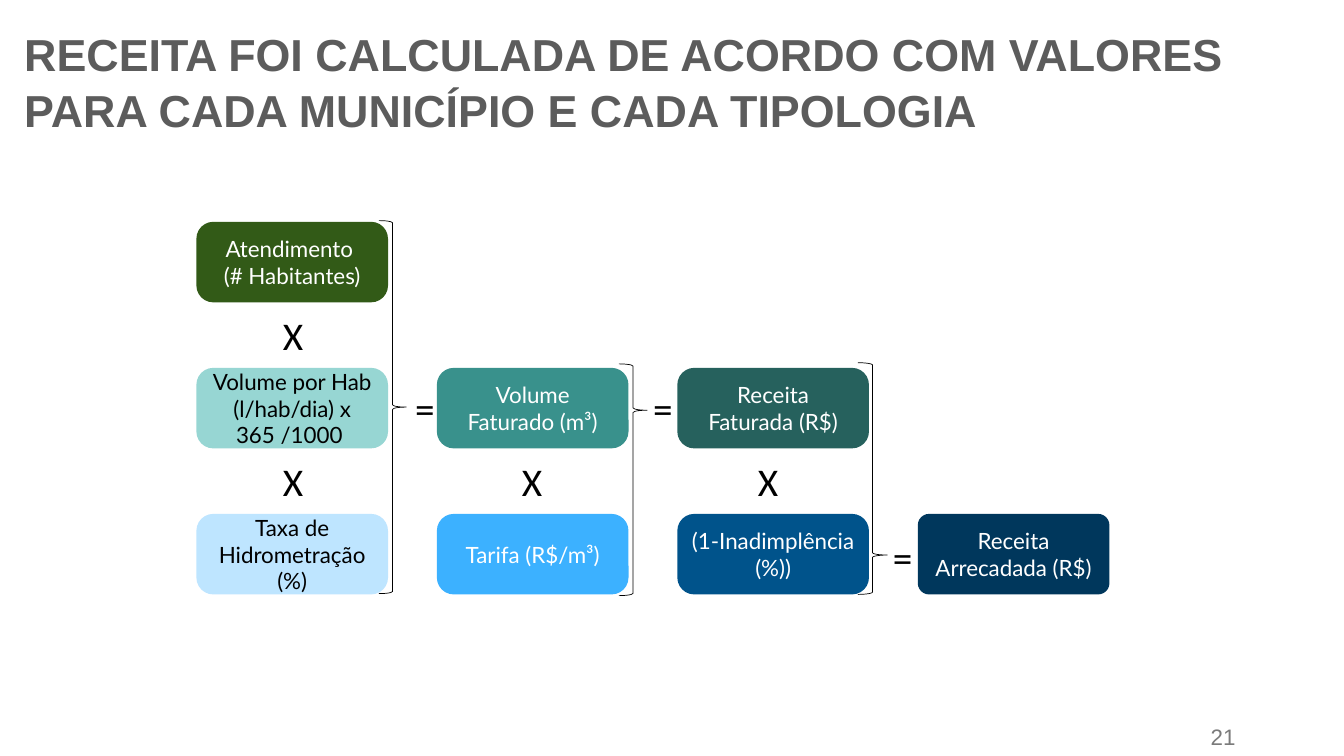
from lxml import etree
from pptx import Presentation
from pptx.dml.color import RGBColor
from pptx.enum import shapes, text
from pptx.util import Cm, Pt

BLACK = RGBColor(0x00, 0x00, 0x00)
WHITE = RGBColor(0xFF, 0xFF, 0xFF)
TITLE_GREY = RGBColor(0x5C, 0x5C, 0x5C)
NUMBER_GREY = RGBColor(0x7B, 0x7B, 0x7B)
DARK_GREEN = RGBColor(0x32, 0x5A, 0x17)
PALE_TEAL = RGBColor(0x97, 0xD6, 0xD3)
TEAL = RGBColor(0x39, 0x91, 0x8C)
DARK_TEAL = RGBColor(0x26, 0x61, 0x5D)
PALE_BLUE = RGBColor(0xBE, 0xE5, 0xFF)
SKY_BLUE = RGBColor(0x3C, 0xB1, 0xFF)
BLUE = RGBColor(0x00, 0x53, 0x8B)
NAVY = RGBColor(0x00, 0x37, 0x5C)

# Grid of factor boxes, in centimetres
GRID_LEFT, GRID_TOP = 4.95, 5.59
COLUMN_STEP, ROW_STEP = 6.06, 3.68
BOX_WIDTH, BOX_HEIGHT = 4.83, 2.03

# Column, row, wording, fill, text colour
FACTORS = [
    (0, 0, "Atendimento \n(# Habitantes)", DARK_GREEN, WHITE),
    (0, 1, "Volume por Hab (l/hab/dia) x 365 /1000 ", PALE_TEAL, BLACK),
    (0, 2, "Taxa de Hidrometração (%)", PALE_BLUE, BLACK),
    (1, 1, "Volume Faturado (m³)", TEAL, WHITE),
    (1, 2, "Tarifa (R$/m³)", SKY_BLUE, WHITE),
    (2, 1, "Receita Faturada (R$)", DARK_TEAL, WHITE),
    (2, 2, "(1-Inadimplência (%))", BLUE, WHITE),
    (3, 2, "Receita Arrecadada (R$)", NAVY, WHITE),
]
# Symbol, left, top
OPERATORS = [
    ("X", 6.88, 7.72), ("X", 6.88, 11.4), ("X", 12.9, 11.4), ("X", 18.85, 11.4),
    ("=", 10.21, 9.55), ("=", 16.21, 9.55), ("=", 22.25, 13.31),
]
# Left, top, width, height, height of the point as a share
BRACES = [
    (9.55, 5.56, 0.69, 9.4, 0.5),
    (15.6, 9.17, 0.71, 5.84, 0.2),
    (21.62, 9.14, 0.74, 5.84, 0.83),
]


def style(paragraph, font_name, size, color, bold=False):
    font = paragraph.font
    font.name, font.size, font.bold = font_name, Pt(size), bold
    font.color.rgb = color


def set_margins(frame, margin):
    frame.margin_left = frame.margin_right = margin
    frame.margin_top = frame.margin_bottom = margin


def add_title(slide, wording):
    title = slide.shapes.title
    title.left, title.top = Cm(0.46), Cm(0.51)
    title.width, title.height = Cm(32.94), Cm(3.02)
    frame = title.text_frame
    frame.text = wording
    frame.auto_size = text.MSO_AUTO_SIZE.NONE
    frame.vertical_anchor = text.MSO_ANCHOR.MIDDLE
    set_margins(frame, Cm(0.15))
    heading = frame.paragraphs[0]
    heading.alignment = text.PP_ALIGN.LEFT
    heading.line_spacing = 1.05
    style(heading, "Arial", 32, TITLE_GREY, bold=True)


def add_factor(slide, column, row, wording, fill, color):
    box = slide.shapes.add_shape(
        shapes.MSO_SHAPE.ROUNDED_RECTANGLE,
        Cm(GRID_LEFT + column * COLUMN_STEP), Cm(GRID_TOP + row * ROW_STEP),
        Cm(BOX_WIDTH), Cm(BOX_HEIGHT))
    box.shadow.inherit = False
    box.adjustments[0] = 0.14 if column == 3 else 0.21
    box.fill.solid()
    box.fill.fore_color.rgb = fill
    box.line.fill.background()
    frame = box.text_frame
    frame.text = wording
    frame.word_wrap = True
    frame.vertical_anchor = text.MSO_ANCHOR.MIDDLE
    for paragraph in frame.paragraphs:
        paragraph.alignment = text.PP_ALIGN.CENTER
        style(paragraph, "Lato", 16, color)
    return box


def add_label(slide, wording, left, top, width, height, font_name, size, color):
    label = slide.shapes.add_textbox(Cm(left), Cm(top), Cm(width), Cm(height))
    frame = label.text_frame
    frame.text = wording
    frame.word_wrap = True
    style(frame.paragraphs[0], font_name, size, color)
    return label


def add_brace(slide, left, top, width, height, point):
    brace = slide.shapes.add_shape(
        shapes.MSO_SHAPE.RIGHT_BRACE, Cm(left), Cm(top), Cm(width), Cm(height))
    brace.shadow.inherit = False
    brace.adjustments[0], brace.adjustments[1] = 0.08, point
    brace.fill.background()
    brace.line.color.rgb = BLACK
    brace.line.width = Pt(0.5)


def main():
    deck = Presentation()
    deck.slide_width, deck.slide_height = Cm(33.87), Cm(19.05)
    slide = deck.slides.add_slide(deck.slide_layouts.get_by_name("Title Only"))

    # Heading and page number
    add_title(slide, "RECEITA FOI CALCULADA DE ACORDO COM VALORES "
                     "PARA CADA MUNICÍPIO E CADA TIPOLOGIA")
    page_number = add_label(slide, "21", 30.38, 18.08, 3.5, 0.94,
                            "Arial", 16, NUMBER_GREY)
    set_margins(page_number.text_frame, Cm(0.13))

    # Calculation: factors, operators and braces
    for column, row, wording, fill, color in FACTORS:
        factor = add_factor(slide, column, row, wording, fill, color)
        if "Inadimplência" in wording:
            factor.text_frame.margin_left = factor.text_frame.margin_right = 0
    for symbol, left, top in OPERATORS:
        add_label(slide, symbol, left, top, 1.04, 1.45, "Calibri", 28, BLACK)
    for brace in BRACES:
        add_brace(slide, *brace)

    deck.save("out.pptx")


if __name__ == "__main__":
    main()
